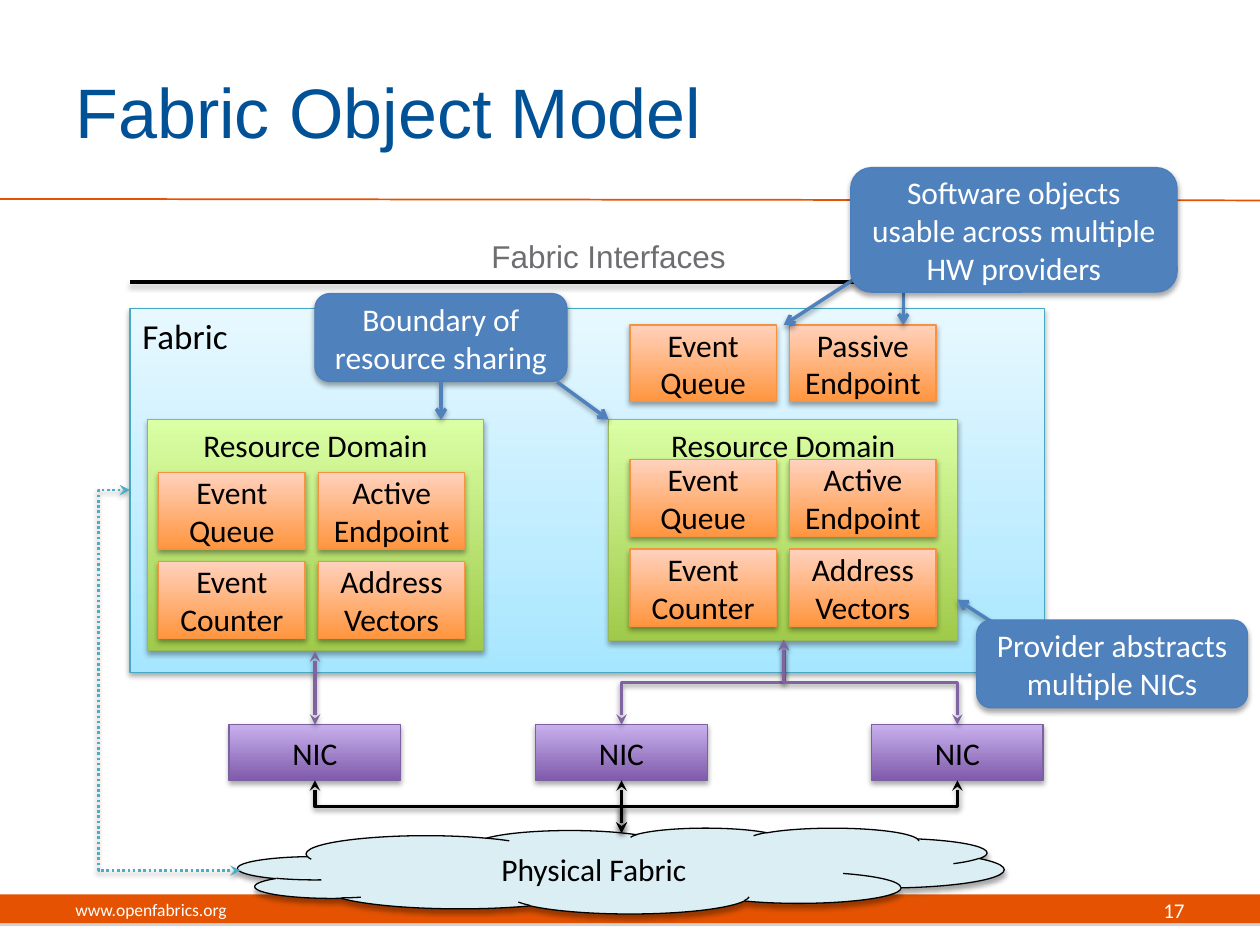
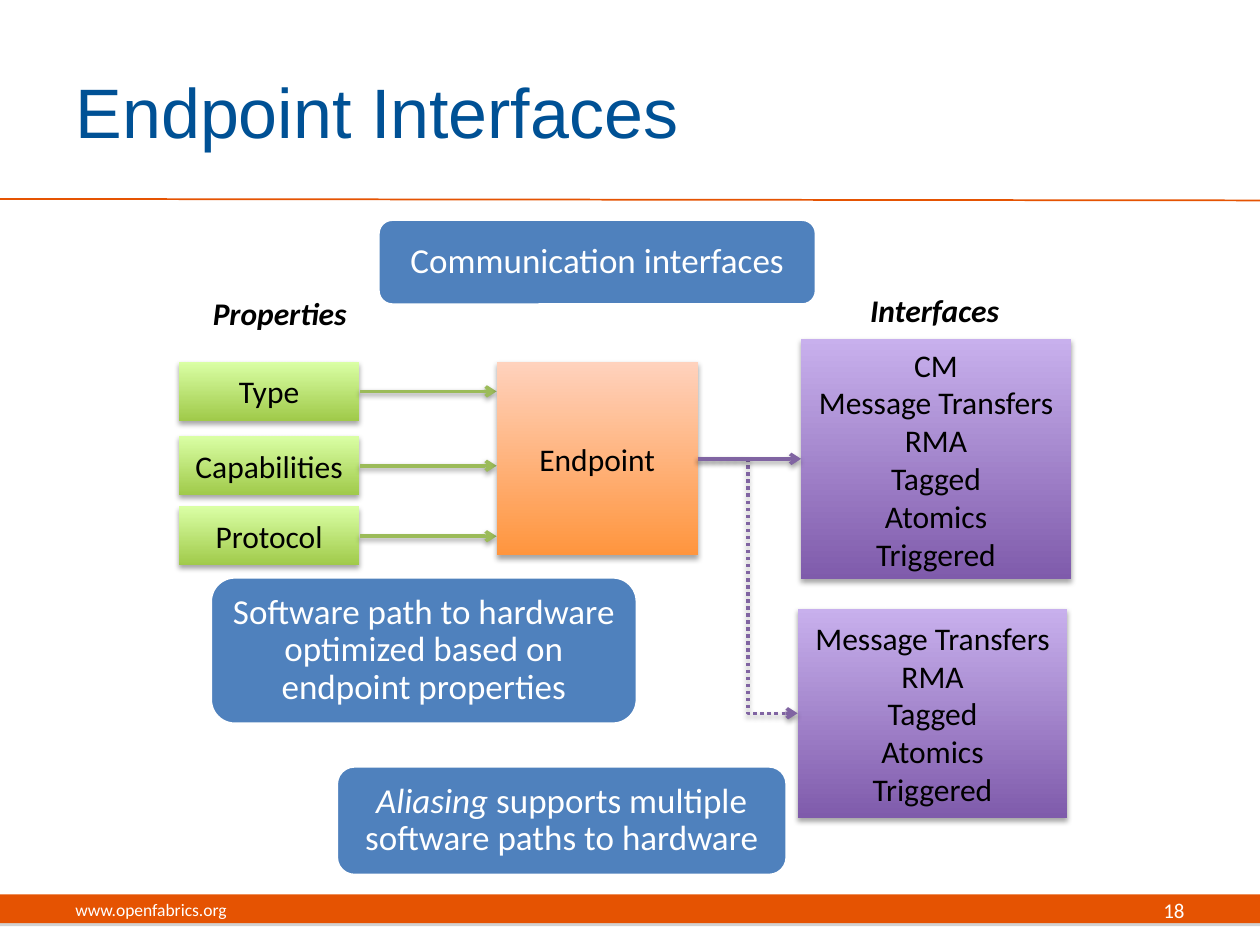
from lxml import etree
from pptx import Presentation
from pptx.dml.color import RGBColor
from pptx.enum.dml import MSO_LINE
from pptx.enum.shapes import MSO_CONNECTOR, MSO_SHAPE
from pptx.enum.text import MSO_ANCHOR, PP_ALIGN
from pptx.oxml.ns import qn
from pptx.util import Cm, Pt

RECTANGLE = MSO_SHAPE.RECTANGLE
ROUNDED = MSO_SHAPE.ROUNDED_RECTANGLE
CLOUD = MSO_SHAPE.CLOUD
STRAIGHT = MSO_CONNECTOR.STRAIGHT
ELBOW = MSO_CONNECTOR.ELBOW
DOTTED = MSO_LINE.ROUND_DOT
LEFT, CENTER, RIGHT = PP_ALIGN.LEFT, PP_ALIGN.CENTER, PP_ALIGN.RIGHT
TOP, MIDDLE = MSO_ANCHOR.TOP, MSO_ANCHOR.MIDDLE

BLACK, WHITE = "000000", "FFFFFF"
ORANGE_BAND, TITLE_BLUE, GRAY = "E55302", "005195", "6D6E71"
CALLOUT_BLUE, CALLOUT_EDGE = "4F81BD", "4B7EBC"
AQUA, PURPLE, GREEN = "4BACC6", "8064A2", "9BBB59"
SKY_FILL, SKY_EDGE = ("A7E6FF", "E7F8FF"), "46AAC5"
GREEN_FILL, GREEN_EDGE = ("A0CA4A", "DAFFA5"), "98B955"
ORANGE_FILL, ORANGE_EDGE = ("FF953E", "FFD2BD"), "F69240"
PURPLE_FILL, PURPLE_EDGE = ("7F5BAB", "C8B0ED"), "7D60A0"


def rgb(value):
    """Turn a hex string into a colour."""
    return RGBColor.from_string(value)


def write_text(shape, text, size=18, color=BLACK, font="Calibri", align=CENTER,
               anchor=MIDDLE, bold=False, italic=False, italic_lead="",
               line_spacing=None, inset=None):
    """Write one paragraph per line, after an optional italic lead."""
    frame = shape.text_frame
    frame.word_wrap = True
    frame.vertical_anchor = anchor
    if inset is not None:
        frame.margin_left = frame.margin_right = Cm(inset)
        frame.margin_top = frame.margin_bottom = Cm(inset)
    for index, line in enumerate(text.split("\n")):
        paragraph = frame.add_paragraph() if index else frame.paragraphs[0]
        paragraph.alignment = align
        if line_spacing:
            paragraph.line_spacing = line_spacing
        for words, slanted in ((italic_lead, True), (line, italic)):
            if words:
                run = paragraph.add_run()
                run.text = words
                run.font.name = font
                run.font.size = Pt(size)
                run.font.bold = bold
                run.font.italic = slanted
                run.font.color.rgb = rgb(color)


def set_shadow(shape, color=BLACK, opacity=35, blur=3.1, distance=1.8):
    """Give a shape a downward shadow, or none when opacity is zero."""
    effects = etree.SubElement(shape.element.spPr, qn("a:effectLst"))
    if opacity:
        shadow = etree.SubElement(
            effects, qn("a:outerShdw"), blurRad=str(Pt(blur)),
            dist=str(Pt(distance)), dir="5400000", rotWithShape="0")
        shade = etree.SubElement(shadow, qn("a:srgbClr"), val=color)
        etree.SubElement(shade, qn("a:alpha"), val=str(opacity * 1000))


class Deck:
    """Hold the shared style and the current slide."""

    def __init__(self):
        """Start an empty presentation."""
        self.presentation = Presentation()
        self.presentation.slide_width = Cm(25.4)
        self.presentation.slide_height = Cm(19.05)
        self.slide = None

    def start(self, title, number):
        """Add a slide with its title, rule and footer."""
        layout = self.presentation.slide_layouts[5]
        self.slide = self.presentation.slides.add_slide(layout)
        heading = self.slide.shapes.title
        heading.left, heading.top = Cm(1.27), Cm(0.64)
        heading.width, heading.height = Cm(20.75), Cm(3.18)
        write_text(heading, title, size=40, color=TITLE_BLUE, font="Arial", align=LEFT)
        band = self.box((0, 18.03, 25.4, 0.58), ORANGE_BAND, shadow=False)
        band.element.spPr.remove(band.element.spPr.find(qn("a:effectLst")))
        set_shadow(band, "808080", blur=0)
        self.line((0, 4.01), (25.4, 4.04), ORANGE_BAND, width=1, shadow=False)
        self.label((1.27, 17.83, 8.05, 1.02), "www.openfabrics.org",
                   size=10, color=WHITE, align=LEFT)
        self.label((18.21, 17.83, 5.92, 1.02), str(number),
                   size=12, color=WHITE, align=RIGHT)

    def label(self, area, text, **text_format):
        """Add a text box."""
        shape = self.slide.shapes.add_textbox(*map(Cm, area))
        write_text(shape, text, **text_format)

    def box(self, area, fill, text="", edge=None, edge_width=0.75, kind=RECTANGLE,
            shadow=True, **text_format):
        """Add a shape with a plain fill or a bottom-to-top gradient."""
        shape = self.slide.shapes.add_shape(kind, *map(Cm, area))
        if isinstance(fill, tuple):
            shape.fill.gradient()
            shape.fill.gradient_angle = 90
            for stop, color in zip(shape.fill.gradient_stops, fill):
                stop.color.rgb = rgb(color)
        else:
            shape.fill.solid()
            shape.fill.fore_color.rgb = rgb(fill)
        if edge:
            shape.line.color.rgb = rgb(edge)
            shape.line.width = Pt(edge_width)
        else:
            shape.line.fill.background()
        set_shadow(shape, opacity=35 if shadow else 0)
        if text:
            write_text(shape, text, **text_format)
        return shape

    def tile(self, left, top, text):
        """Add a small orange object tile."""
        self.box((left, top, 2.95, 1.55), ORANGE_FILL, text, ORANGE_EDGE)

    def callout(self, area, text):
        """Add a blue callout with a shadow."""
        self.box(area, CALLOUT_BLUE, text, CALLOUT_EDGE, kind=ROUNDED, color=WHITE)

    def banner(self, area, text, **text_format):
        """Add a large flat blue statement."""
        self.box(area, CALLOUT_BLUE, text, WHITE, 2, ROUNDED, False, size=20,
                 color=WHITE, line_spacing=0.9, inset=0.2, **text_format)

    def line(self, begin, end, color, width=2, kind=STRAIGHT, head=None, tail=None,
             dash=None, shadow=True):
        """Add a connector with optional arrowheads."""
        connector = self.slide.shapes.add_connector(kind, *map(Cm, begin + end))
        connector.line.color.rgb = rgb(color)
        connector.line.width = Pt(width)
        if dash:
            connector.line.dash_style = dash
        outline = connector.element.spPr.find(qn("a:ln"))
        for tag, arrow in (("a:headEnd", head), ("a:tailEnd", tail)):
            if arrow:
                etree.SubElement(outline, qn(tag), type=arrow)
        set_shadow(connector, opacity=38 if shadow else 0, distance=1.6)
        return connector

    def arrow(self, begin, end, color=CALLOUT_BLUE, **line_format):
        """Add a line with an open arrowhead at its end."""
        return self.line(begin, end, color, tail="arrow", **line_format)

    def link(self, begin, end, color, **line_format):
        """Add a line with a stealth arrowhead at both ends."""
        return self.line(begin, end, color, head="stealth", tail="stealth", **line_format)

    def drop(self, begin, end, color):
        """Add a two-way elbow that leaves and arrives vertically."""
        across, down = end[0] - begin[0], end[1] - begin[1]
        if abs(across) < 0.01:
            self.link(begin, end, color)
            return
        turn = 1 if across < 0 else -1
        middle_x, middle_y = begin[0] + across / 2, begin[1] + down / 2
        half_width, half_height = turn * down / 2, abs(across) / 2
        connector = self.link((middle_x - half_width, middle_y - half_height),
                              (middle_x + half_width, middle_y + half_height),
                              color, kind=ELBOW)
        connector.rotation = 90 * turn % 360


def build_object_model(deck):
    """Build the slide of fabric objects."""
    deck.start("Fabric Object Model", 17)
    deck.box((2.62, 6.22, 18.44, 7.34), SKY_FILL, "Fabric", SKY_EDGE,
             size=20, align=LEFT, anchor=TOP)
    deck.line((2.62, 5.69), (22.02, 5.69), BLACK)
    deck.label((2.62, 4.65, 19.3, 1.02), "Fabric Interfaces",
               color=GRAY, font="Arial", anchor=TOP)

    nic_centers, nic_top, nic_height = (6.35, 12.53, 19.3), 14.61, 1.12
    deck.box((4.8, 16.69, 15.44, 1.73), "DBEEF4", "Physical Fabric", BLACK, kind=CLOUD)
    for center in nic_centers:
        deck.box((center - 1.73, nic_top, 3.46, nic_height), PURPLE_FILL, "NIC", PURPLE_EDGE)
        deck.drop((center, nic_top + nic_height), (nic_centers[1], 16.79), BLACK)

    domains = (((2.97, 8.46, 6.78, 4.65), 3.2, 9.52), ((12.27, 8.46, 7.04, 4.45), 12.7, 9.27))
    names = (("Event Queue", "Active Endpoint"), ("Event Counter", "Address Vectors"))
    column_step, row_step = 3.22, 1.8
    for area, left, top in domains:
        deck.box(area, GREEN_FILL, "Resource Domain", GREEN_EDGE, anchor=TOP)
        for row, pair in enumerate(names):
            for column, name in enumerate(pair):
                deck.tile(left + column * column_step, top + row * row_step, name)
    for column, name in enumerate(("Event Queue", "Passive Endpoint")):
        deck.tile(12.7 + column * column_step, 6.55, name)

    for start, center in zip(((6.35, 13.13), (15.8, 12.9), (15.8, 12.9)), nic_centers):
        deck.drop(start, (center, nic_top), PURPLE)
    fabric_link = deck.link((2.62, 9.88), (4.85, 17.55), AQUA,
                            width=1.5, kind=ELBOW, dash=DOTTED)
    geometry = fabric_link.element.spPr.find(qn("a:prstGeom"))
    adjustments = geometry.find(qn("a:avLst"))
    if adjustments is None:
        adjustments = etree.SubElement(geometry, qn("a:avLst"))
    etree.SubElement(adjustments, qn("a:gd"), name="adj1", fmla="val -28400")

    deck.callout((6.35, 5.92, 5.08, 1.77), "Boundary of resource sharing")
    for begin, end in (((8.89, 7.7), (8.89, 8.46)), ((11.23, 7.7), (12.27, 8.46)),
                       ((17.4, 5.51), (15.8, 6.55)), ((18.21, 5.89), (18.21, 6.55)),
                       ((20.12, 12.62), (19.3, 12.09))):
        deck.arrow(begin, end)
    deck.callout((19.69, 12.5, 5.46, 1.77), "Provider abstracts multiple NICs")
    deck.callout((17.15, 3.38, 6.58, 2.51),
                 "Software objects usable across multiple HW providers")


def build_endpoint_interfaces(deck):
    """Build the slide of endpoint properties and interfaces."""
    deck.start("Endpoint Interfaces", 18)
    for name, top in (("Type", 7.29), ("Capabilities", 8.79), ("Protocol", 10.21)):
        deck.box((3.61, top, 3.63, 1.19), GREEN_FILL, name)
        deck.arrow((7.26, top + 0.6), (10.01, top + 0.6), GREEN)
    deck.label((3.61, 5.77, 4.06, 1.09), "Properties", bold=True, italic=True)
    deck.label((16.15, 5.72, 5.38, 1.04), "Interfaces", bold=True, italic=True)
    deck.box((10.01, 7.29, 4.06, 3.91), ORANGE_FILL, "Endpoint")

    transfers = "Message Transfers\nRMA\nTagged\nAtomics\nTriggered"
    deck.box((16.15, 6.83, 5.44, 4.85), PURPLE_FILL, "CM\n" + transfers)
    deck.box((16.08, 12.27, 5.44, 4.22), PURPLE_FILL, transfers)
    deck.banner((7.62, 4.42, 8.84, 1.73), "Communication interfaces")
    deck.banner((4.24, 11.63, 8.61, 2.97),
                "Software path to hardware optimized based on endpoint properties")
    deck.banner((6.78, 15.44, 9.09, 2.21), " supports multiple software paths to hardware",
                italic_lead="Aliasing")
    deck.arrow((14.07, 9.25), (16.08, 14.38), PURPLE, kind=ELBOW, dash=DOTTED)
    deck.arrow((14.07, 9.25), (16.15, 9.25), PURPLE)


def main():
    """Build and save the presentation."""
    deck = Deck()
    build_object_model(deck)
    build_endpoint_interfaces(deck)
    deck.presentation.save("out.pptx")


if __name__ == "__main__":
    main()
